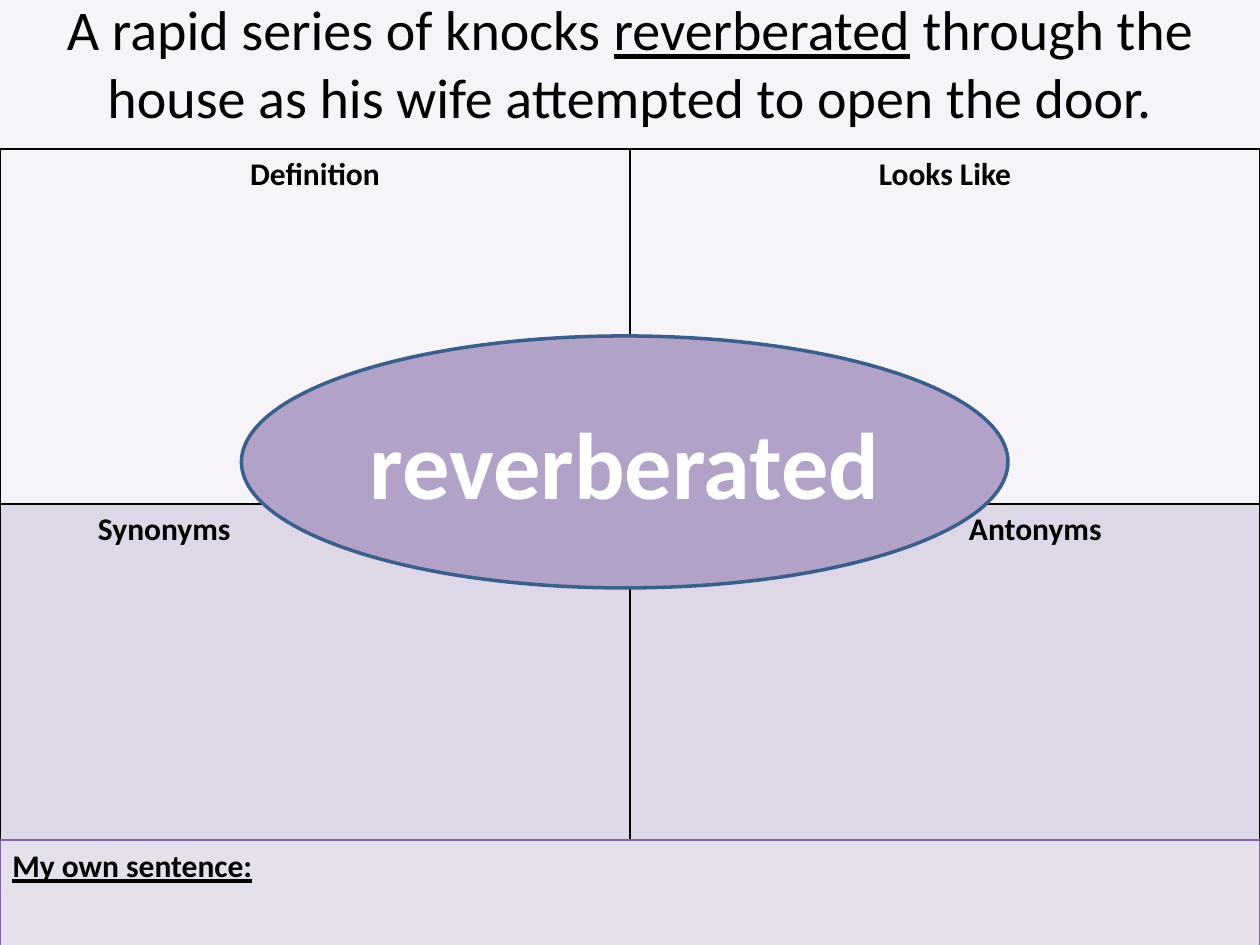
"""Build a vocabulary slide: example sentence, four-part word grid and central word."""
from dataclasses import dataclass
from typing import Any, Optional

from lxml import etree
from pptx import Presentation
from pptx import util as u
from pptx.dml import color
from pptx.enum import shapes, text
from pptx.oxml import ns

Pt = u.Pt
FONT = "Calibri"
WORD = "reverberated"
WIDTH, HEIGHT = 720, 540
COLORS = {
    "background": "F6F4F9",
    "black": "000000",
    "white": "FFFFFF",
    "purple": "8064A2",
    "lavender": "E6E0EC",
    "lilac": "B3A2C7",
    "blue": "3A5F8C",
}


@dataclass(frozen=True)
class GridCell:
    row: int
    column: int
    label: str
    indent: Optional[float] = None
    tinted: bool = False


@dataclass(frozen=True)
class Panel:
    kind: shapes.MSO_SHAPE
    left: float
    top: float
    width: float
    height: float
    fill: str
    line: str
    line_width: float
    label: str
    size: float
    ink: str
    align: text.PP_ALIGN
    anchor: text.MSO_ANCHOR
    underline: bool = False


ROW_HEIGHTS = (203, 224.6)
CELLS = (
    GridCell(0, 0, "Definition"),
    GridCell(0, 1, "Looks Like"),
    GridCell(1, 0, "Synonyms", 56, True),
    GridCell(1, 1, "Antonyms", 193.7, True),
)
PANELS = (
    Panel(shapes.MSO_SHAPE.RECTANGLE, 0, 480, WIDTH, 73, "lavender", "purple", 0.75,
          "My own sentence:", 18, "black", text.PP_ALIGN.LEFT, text.MSO_ANCHOR.TOP, True),
    Panel(shapes.MSO_SHAPE.OVAL, 138, 192, 438, 144, "lilac", "blue", 2,
          WORD, 54, "white", text.PP_ALIGN.CENTER, text.MSO_ANCHOR.MIDDLE),
)


def rgb(name: str) -> color.RGBColor:
    """Return the named colour."""
    return color.RGBColor.from_string(COLORS[name])


def format_run(run: Any, size: float, ink: str, bold: bool, underline: bool) -> None:
    """Set the font of one run."""
    run.font.name = FONT
    run.font.size = Pt(size)
    run.font.color.rgb = rgb(ink)
    run.font.bold = bold
    run.font.underline = underline


def add_borders(properties: Any) -> None:
    """Put thin black lines on all sides of a cell, ahead of its fill."""
    for position, side in enumerate(("lnL", "lnR", "lnT", "lnB")):
        line = etree.Element(ns.qn(f"a:{side}"), w=str(Pt(1)))
        fill = etree.SubElement(line, ns.qn("a:solidFill"))
        etree.SubElement(fill, ns.qn("a:srgbClr"), val=COLORS["black"])
        properties.insert(position, line)


def fill_cell(table: Any, item: GridCell) -> None:
    """Write and style one cell of the grid."""
    cell = table.cell(item.row, item.column)
    cell.text_frame.text = item.label
    paragraph = cell.text_frame.paragraphs[0]
    format_run(paragraph.runs[0], 18, "black", True, False)
    if item.indent is None:
        paragraph.alignment = text.PP_ALIGN.CENTER
    else:
        cell.margin_left = Pt(item.indent)
    properties = cell._tc.get_or_add_tcPr()
    if item.tinted:
        cell.fill.solid()
        cell.fill.fore_color.rgb = rgb("purple")
        tint = properties.find(".//" + ns.qn("a:srgbClr"))
        etree.SubElement(tint, ns.qn("a:alpha"), val="20000")
    else:
        cell.fill.background()
    add_borders(properties)


def add_grid(slide: Any) -> None:
    """Add the two-by-two word grid."""
    table = slide.shapes.add_table(
        2, 2, 0, Pt(85), Pt(WIDTH), Pt(sum(ROW_HEIGHTS))).table
    table.first_row = table.horz_banding = False
    for row, height in zip(table.rows, ROW_HEIGHTS):
        row.height = Pt(height)
    for item in CELLS:
        fill_cell(table, item)


def add_sentence(slide: Any) -> None:
    """Add the example sentence with its key word underlined."""
    box = slide.shapes.add_textbox(0, Pt(-6.5), Pt(WIDTH), Pt(85))
    box.text_frame.word_wrap = True
    paragraph = box.text_frame.paragraphs[0]
    paragraph.alignment = text.PP_ALIGN.CENTER
    for part in ("A rapid series of knocks ", WORD,
                 " through the house as his wife attempted to open the door."):
        run = paragraph.add_run()
        run.text = part
        format_run(run, 32, "black", False, part == WORD)


def add_panel(slide: Any, panel: Panel) -> None:
    """Add one filled shape with its label."""
    shape = slide.shapes.add_shape(
        panel.kind, Pt(panel.left), Pt(panel.top), Pt(panel.width), Pt(panel.height))
    shape.shadow.inherit = False
    shape.fill.solid()
    shape.fill.fore_color.rgb = rgb(panel.fill)
    shape.line.color.rgb = rgb(panel.line)
    shape.line.width = Pt(panel.line_width)
    frame = shape.text_frame
    frame.word_wrap = True
    frame.vertical_anchor = panel.anchor
    frame.text = panel.label
    paragraph = frame.paragraphs[0]
    paragraph.alignment = panel.align
    format_run(paragraph.runs[0], panel.size, panel.ink, True, panel.underline)


def main() -> None:
    """Create the presentation and save it."""
    presentation = Presentation()
    presentation.slide_width, presentation.slide_height = Pt(WIDTH), Pt(HEIGHT)
    slide = presentation.slides.add_slide(presentation.slide_layouts[6])
    slide.background.fill.solid()
    slide.background.fill.fore_color.rgb = rgb("background")
    add_grid(slide)
    add_sentence(slide)
    for panel in PANELS:
        add_panel(slide, panel)
    presentation.save("out.pptx")


if __name__ == "__main__":
    main()
